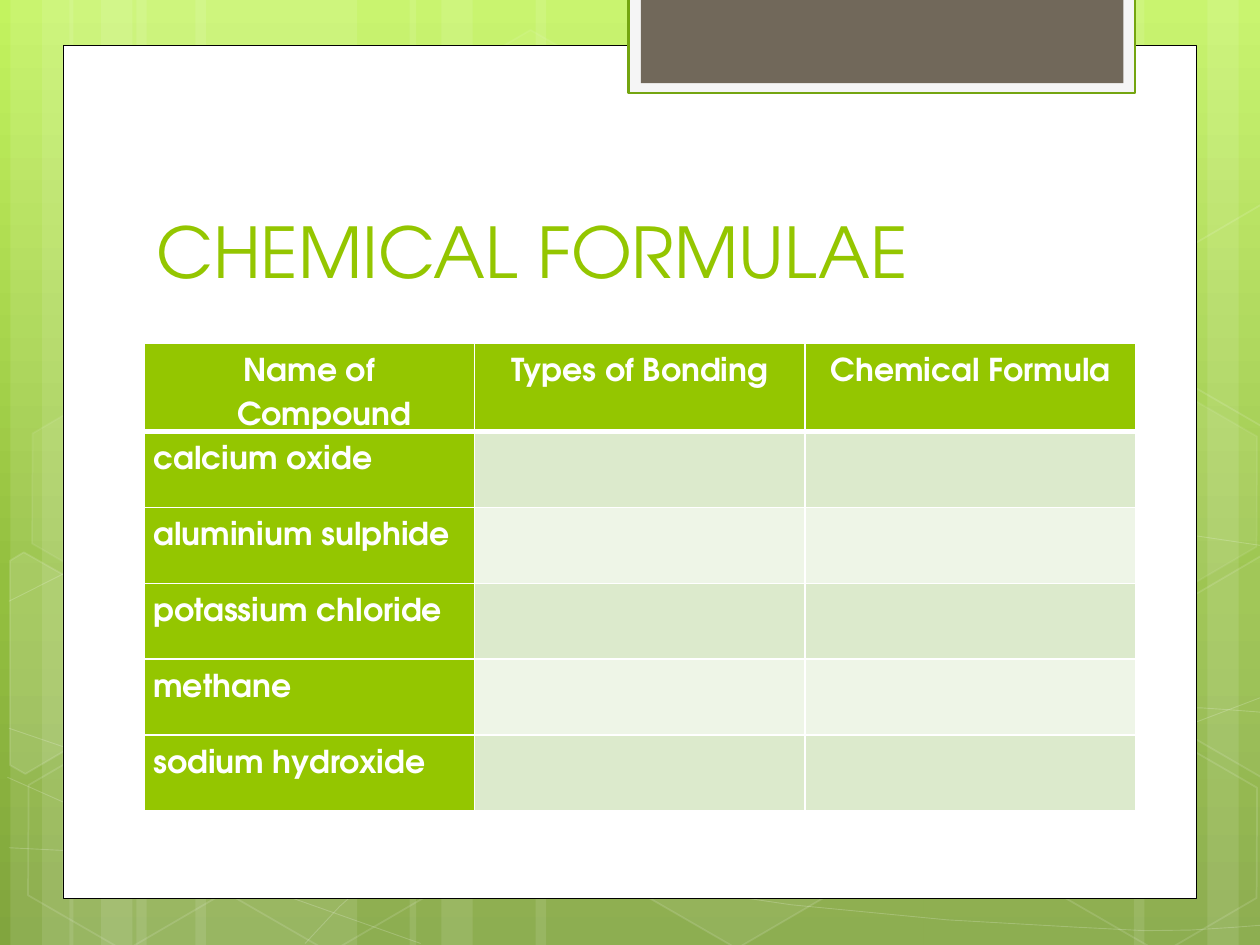
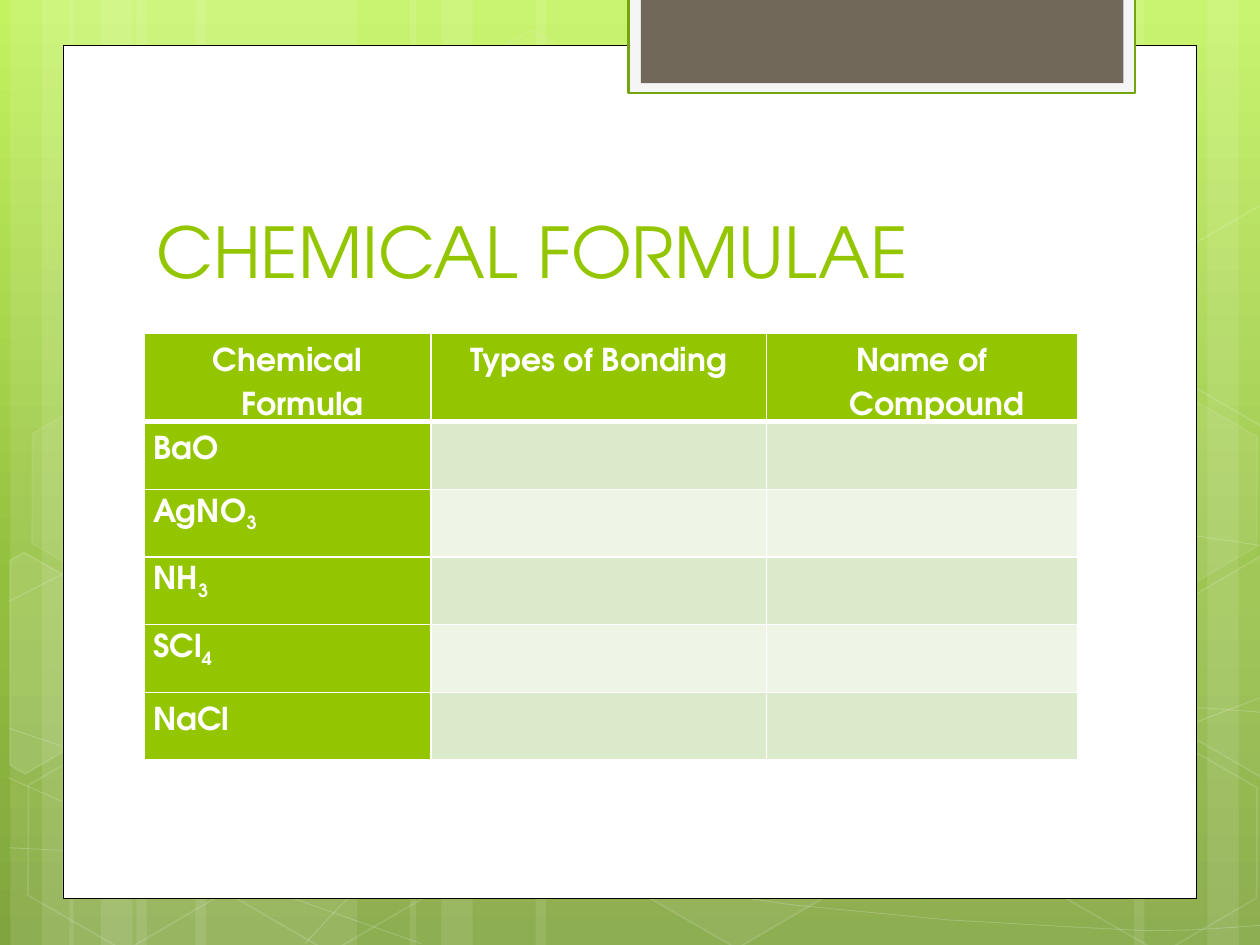
import math
from collections import namedtuple
from dataclasses import dataclass

from lxml import etree
from pptx import Presentation
from pptx import util as u
from pptx.dml import color
from pptx.enum import shapes, text
from pptx.oxml import ns

Box = namedtuple("Box", "left top width height")  # centimetres


@dataclass(frozen=True)
class Theme:
    font: str = "TeX Gyre Adventor"
    accent: str = "94C600"
    white: str = "FFFFFF"
    black: str = "000000"
    tab_mat: str = "F5F5F5"
    tab_edge: str = "74A510"
    tab_core: str = "71685A"
    row_tints: tuple = ("DCEACC", "EEF5E7")
    sky: tuple = ((0, "C3F35F"), (62, "93BF3F"), (100, "81A53E"))
    title_size: int = 40
    table_size: int = 18
    table_line: float = 25.2


THEME = Theme()
SLIDE = Box(0, 0, 25.4, 19.05)
TITLE = Box(2.9, 2.84, 19.51, 3.18)
TILT = 30  # degrees, shared by all hexagons

# Each swoosh is a start point followed by three points per cubic segment.
SWOOSHES = [
    [(0.18, 17.09), (1.55, 17.17), (2.92, 17.25), (4.83, 17.22),
     (6.73, 17.2), (9.09, 17.15), (11.63, 16.89),
     (14.17, 16.64), (17.78, 16.15), (20.12, 15.67),
     (22.43, 15.19), (24.82, 14.43), (25.58, 14)],
    [(0.18, 12.12), (0.91, 11.71), (1.65, 11.33), (3.07, 10.95),
     (4.52, 10.52), (6.58, 10.01), (8.81, 9.83),
     (11.07, 9.65), (13.82, 9.63), (16.61, 9.83),
     (19.41, 10.03), (24.05, 10.82), (25.58, 11.02)],
    [(0.15, 15.67), (3.23, 17.07), (6.27, 18.47), (8.48, 19.02)],
    [(0.18, 14.68), (0.97, 14.96), (1.78, 15.24), (3.25, 15.65),
     (4.72, 16.03), (6.93, 16.66), (9.07, 17.09),
     (11.18, 17.53), (13.84, 17.98), (15.95, 18.24),
     (18.06, 18.52), (20.32, 18.62), (21.67, 18.69),
     (22.99, 18.8), (23.34, 18.75), (24, 18.75),
     (24.66, 18.72), (25.12, 18.67), (25.58, 18.64)],
    [(6.15, 19.02), (6.6, 18.52), (7.06, 18.01), (7.67, 17.55),
     (8.28, 17.09), (9.14, 16.59), (9.86, 16.23),
     (10.57, 15.88), (11, 15.72), (11.94, 15.47),
     (12.88, 15.21), (14.55, 14.86), (15.44, 14.68),
     (16.36, 14.5), (16.48, 14.5), (17.27, 14.45),
     (18.06, 14.38), (19.3, 14.3), (20.17, 14.27),
     (21.06, 14.25), (22.5, 14.27), (22.5, 14.27),
     (22.5, 14.27), (24.21, 14.27), (24.21, 14.27),
     (24.66, 14.3), (25.1, 14.33), (25.32, 14.35),
     (25.55, 14.38), (25.48, 14.35), (25.55, 14.38)],
]

# left, top, fill opacity, line opacity
HEXAGONS = [
    (8.48, 0.91, 4, 8), (12.62, 14.96, 6, 12), (0.28, 15.01, None, 12),
    (0.36, 7.92, 7, 8), (4.42, 15.04, None, 12), (19.13, 11.51, 10, 12),
    (21.18, 15.06, None, 12), (21.18, 7.98, 7, 8),
]
# Hexagons cut off by the slide edge: centre of rotation, then corners as seen.
LEFT_CUT = (0.91, 13.59), [(0.2, 11.3), (0.48, 11.13), (2.44, 12.24),
                           (2.41, 14.48), (0.51, 15.6), (0.2, 15.42)]
RIGHT_CUT = (25.02, 13.21), [(23.52, 12.32), (25.43, 11.2), (25.63, 11.33),
                             (25.63, 15.57), (25.45, 15.67), (23.52, 14.55)]


def rgb(code):
    return color.RGBColor.from_string(code)


def emu(box):
    return [u.Cm(length) for length in box]


def set_opacity(parent, percent):
    """Make the solid colour directly under parent partly transparent."""
    tint = parent.find(ns.qn("a:solidFill")).find(ns.qn("a:srgbClr"))
    etree.SubElement(tint, ns.qn("a:alpha")).set("val", str(percent * 1000))


def paint(shape, fill=None, fill_opacity=100, line=None, width=1, line_opacity=100):
    shape.shadow.inherit = False
    properties = shape.element.spPr
    if fill:
        shape.fill.solid()
        shape.fill.fore_color.rgb = rgb(fill)
        if fill_opacity < 100:
            set_opacity(properties, fill_opacity)
    else:
        shape.fill.background()
    if line:
        shape.line.color.rgb = rgb(line)
        shape.line.width = u.Pt(width)
        if line_opacity < 100:
            set_opacity(properties.find(ns.qn("a:ln")), line_opacity)
    else:
        shape.line.fill.background()


def add_panel(page, box, **look):
    paint(page.shapes.add_shape(shapes.MSO_SHAPE.RECTANGLE, *emu(box)), **look)


def add_outline(page, box, points, closed, tilt=0, **look):
    places = [(u.Cm(box.left + x), u.Cm(box.top + y)) for x, y in points]
    builder = page.shapes.build_freeform(*places[0])
    builder.add_line_segments(places[1:], close=closed)
    outline = builder.convert_to_shape()
    outline.rotation = tilt
    paint(outline, **look)


def curve_points(points, steps=2):
    """Sample a chain of gentle cubic Bézier segments."""
    sampled = [points[0]]
    for first in range(0, len(points) - 1, 3):
        segment = points[first:first + 4]
        for step in range(1, steps + 1):
            t = step / steps
            weights = ((1 - t) ** 3, 3 * t * (1 - t) ** 2, 3 * t ** 2 * (1 - t), t ** 3)
            sampled.append(tuple(sum(w * p[axis] for w, p in zip(weights, segment))
                                 for axis in (0, 1)))
    return sampled


def add_cut_hexagon(page, box, centre, corners, **look):
    """Turn the corners upright about the centre, then tilt the finished shape."""
    cos, sin = math.cos(math.radians(TILT)), math.sin(math.radians(TILT))
    offsets = [(x - centre[0], y - centre[1]) for x, y in corners]
    upright = [(centre[0] + x * cos + y * sin, centre[1] + y * cos - x * sin)
               for x, y in offsets]
    add_outline(page, box, upright, True, tilt=TILT,
                line=THEME.white, line_opacity=12, **look)


def write_text(frame, words, size, colour, bold=False, align=None,
               hanging=0, line_spacing=None):
    """Fill the frame's first paragraph; an underscore switches subscript on and off."""
    para = frame.paragraphs[0]
    para.alignment = align
    if line_spacing:
        para.line_spacing = u.Pt(line_spacing)
    if hanging:
        layout = para._p.get_or_add_pPr()
        layout.set("marL", str(u.Cm(hanging)))
        layout.set("indent", str(-u.Cm(hanging)))
    for place, piece in enumerate(words.split("_")):
        span = para.add_run()
        span.text = piece
        span.font.name = THEME.font
        span.font.size = u.Pt(size)
        span.font.bold = bold
        span.font.color.rgb = rgb(colour)
        if place % 2:
            span._r.get_or_add_rPr().set("baseline", "-25000")


def set_sky(page):
    page.background.fill.gradient()
    gradient = next(page.element.iter(ns.qn("a:gradFill")))
    stops = gradient.find(ns.qn("a:gsLst"))
    for stop in list(stops):
        stops.remove(stop)
    for position, code in THEME.sky:
        stop = etree.SubElement(stops, ns.qn("a:gs"), pos=str(position * 1000))
        etree.SubElement(stop, ns.qn("a:srgbClr"), val=code)
    gradient.find(ns.qn("a:lin")).set("ang", "5400000")


def add_light_trio(page, box, start, wide=4.45, mirrored=False):
    """Three overlapping light bands that run inwards from start."""
    for offset, width in ((2.54, wide), (0, 1.27), (0.64, 2.11)):
        left = start - offset - width if mirrored else start + offset
        add_panel(page, Box(box.left + left, box.top, width, box.height),
                  fill=THEME.white, fill_opacity=10)


def add_hexagon(page, box, left, top, fill_opacity, line_opacity):
    place = Box(box.left + left, box.top + top, 4.45, 3.86)
    hexagon = page.shapes.add_shape(shapes.MSO_SHAPE.HEXAGON, *emu(place))
    hexagon.adjustments[0] = 0.285
    hexagon.rotation = TILT
    paint(hexagon, fill=THEME.white if fill_opacity else None,
          fill_opacity=fill_opacity or 100, line=THEME.white, line_opacity=line_opacity)


def add_backdrop(page, box):
    set_sky(page)
    add_light_trio(page, box, 0.21)
    add_light_trio(page, box, 1.4)
    add_light_trio(page, box, 25.61, mirrored=True)
    add_light_trio(page, box, 8.26, wide=7.82)
    for swoosh in SWOOSHES:
        add_outline(page, box, curve_points(swoosh), False,
                    line=THEME.white, width=0.5, line_opacity=20)
    for hexagon in HEXAGONS:
        add_hexagon(page, box, *hexagon)
    add_cut_hexagon(page, box, *LEFT_CUT, fill=THEME.white, fill_opacity=10)
    add_cut_hexagon(page, box, *RIGHT_CUT, fill=THEME.white, fill_opacity=4)
    add_cut_hexagon(page, box._replace(top=box.top - 7.08), *RIGHT_CUT)


def add_sheet(page, box):
    """The white sheet with the tab that hangs over its top edge."""
    left, top = box.left, box.top
    add_panel(page, Box(left + 1.27, top + 0.91, box.width - 2.54, 17.2),
              fill=THEME.white, line=THEME.black, width=0.5)
    add_panel(page, Box(left + 12.67, top - 0.05, 10.21, 1.93),
              fill=THEME.tab_mat, line=THEME.tab_edge, width=1.25)
    add_panel(page, Box(left + 12.92, top - 0.05, 9.73, 1.73), fill=THEME.tab_core)


def add_title(page, box, words):
    frame = page.shapes.add_textbox(*emu(box)).text_frame
    frame.word_wrap = True
    frame.vertical_anchor = text.MSO_ANCHOR.BOTTOM
    write_text(frame, words, THEME.title_size, THEME.accent)


def set_borders(cell, top=1, bottom=1):
    properties = cell._tc.get_or_add_tcPr()
    sides = (("L", 1), ("R", 1), ("T", top), ("B", bottom))
    for place, (side, width) in enumerate(sides):
        border = etree.Element(ns.qn(f"a:ln{side}"), w=str(u.Pt(width)))
        fill = etree.SubElement(border, ns.qn("a:solidFill"))
        etree.SubElement(fill, ns.qn("a:srgbClr"), val=THEME.white)
        properties.insert(place, border)


def add_compound_table(page, box, headings, compounds, shares):
    """Headings on top, compounds down the first column, the rest left to fill in."""
    heading_height = 1.77
    row_height = (box.height - heading_height) / len(compounds)
    table = page.shapes.add_table(len(compounds) + 1, len(headings), *emu(box)).table
    table.horz_banding = False
    for column, share in zip(table.columns, shares):
        column.width = u.Cm(box.width * share / sum(shares))
    for row_index, row in enumerate(table.rows):
        is_heading = row_index == 0
        row.height = u.Cm(heading_height if is_heading else row_height)
        for column_index, cell in enumerate(row.cells):
            is_label = is_heading or column_index == 0
            cell.fill.solid()
            cell.fill.fore_color.rgb = rgb(
                THEME.accent if is_label else THEME.row_tints[(row_index - 1) % 2])
            set_borders(cell, top=3 if row_index == 1 else 1, bottom=3 if is_heading else 1)
            if is_label:
                cell.margin_left = cell.margin_right = u.Cm(0.19)
                cell.margin_top = cell.margin_bottom = 0
                write_text(cell.text_frame,
                           headings[column_index] if is_heading else compounds[row_index - 1],
                           THEME.table_size, THEME.white, bold=True,
                           align=text.PP_ALIGN.CENTER if is_heading else None,
                           hanging=0.61, line_spacing=THEME.table_line)


def add_exercise(deck, table_box, headings, compounds, shares=(1, 1, 1)):
    page = deck.slides.add_slide(deck.slide_layouts[6])
    add_backdrop(page, SLIDE)
    add_sheet(page, SLIDE)
    add_title(page, TITLE, "CHEMICAL FORMULAE")
    add_compound_table(page, table_box, headings, compounds, shares)


def main():
    deck = Presentation()
    deck.slide_width, deck.slide_height = u.Cm(SLIDE.width), u.Cm(SLIDE.height)
    add_exercise(deck, Box(2.9, 6.92, 20, 9.42),
                 ["Name of Compound", "Types of Bonding", "Chemical Formula"],
                 ["calcium oxide", "aluminium sulphide", "potassium chloride",
                  "methane", "sodium hydroxide"])
    add_exercise(deck, Box(2.9, 6.72, 18.82, 8.59),
                 ["Chemical Formula", "Types of Bonding", "Name of Compound"],
                 ["BaO", "AgNO_3", "NH_3", "SCl_4", "NaCl"],
                 shares=(5.79, 6.76, 6.27))
    deck.save("out.pptx")


if __name__ == "__main__":
    main()
